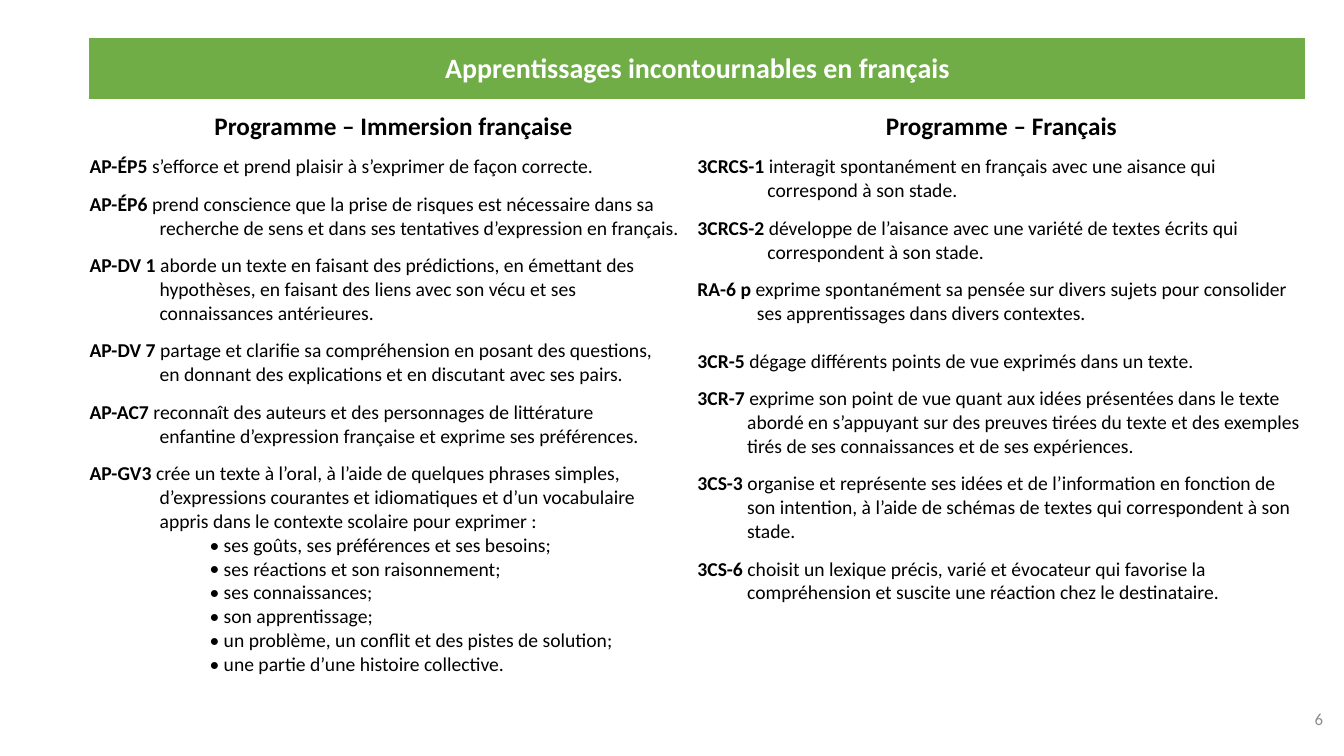
import pptx
import pptx.util
import pptx.dml.color
import pptx.enum.text
import lxml.etree

Pt = pptx.util.Pt
ALIGN = pptx.enum.text.PP_ALIGN
MIDDLE = pptx.enum.text.MSO_ANCHOR.MIDDLE
COLORS = {"banner": "70AD47", "banner_text": "FFFFFF", "text": "000000", "number": "8C8C8C"}
NS = "http://schemas.openxmlformats.org/drawingml/2006/main"
NO_GRID_STYLE = "{2D5ABB26-0587-4C30-8999-92F81FD0307C}"
GAP = 9.75


def add_run(paragraph, text, size, color, bold=False):
    run = paragraph.add_run()
    run.text = text
    run.font.name = "Calibri"
    run.font.size = Pt(size)
    run.font.bold = bold
    run.font.color.rgb = pptx.dml.color.RGBColor.from_string(COLORS[color])


def set_indent(paragraph, margin, first_line):
    properties = paragraph._p.get_or_add_pPr()
    properties.set("marL", str(Pt(margin)))
    properties.set("indent", str(Pt(first_line)))
    return properties


immersion_outcomes = [
    ("AP-ÉP5 ", "s’efforce et prend plaisir à s’exprimer de façon correcte.", 50, 0),
    ("AP-ÉP6 ", "prend conscience que la prise de risques est nécessaire dans sa recherche de sens et dans ses tentatives d’expression en français.", 50, GAP),
    ("AP-DV 1 ", "aborde un texte en faisant des prédictions, en émettant des hypothèses, en faisant des liens avec son vécu et ses\nconnaissances antérieures.", 50, GAP),
    ("AP-DV 7 ", "partage et clarifie sa compréhension en posant des questions,\nen donnant des explications et en discutant avec ses pairs.", 50, GAP),
    ("AP-AC7 ", "reconnaît des auteurs et des personnages de littérature\nenfantine d’expression française et exprime ses préférences.", 50, GAP),
    ("AP-GV3 ", "crée un texte à l’oral, à l’aide de quelques phrases simples, d’expressions courantes et idiomatiques et d’un vocabulaire\nappris dans le contexte scolaire pour exprimer :", 50, GAP),
]
expression_topics = [
    "ses goûts, ses préférences et ses besoins;",
    "ses réactions et son raisonnement;",
    "ses connaissances;",
    "son apprentissage;",
    "un problème, un conflit et des pistes de solution;",
    "une partie d’une histoire collective.",
]
french_outcomes = [
    ("3CRCS-1 ", "interagit spontanément en français avec une aisance qui correspond à son stade.", 50, 0),
    ("3CRCS-2 ", "développe de l’aisance avec une variété de textes écrits qui correspondent à son stade.", 50, GAP),
    ("RA-6 p ", "exprime spontanément sa pensée sur divers sujets pour consolider ses apprentissages dans divers contextes.", 42.5, GAP),
    ("3CR-5 ", "dégage différents points de vue exprimés dans un texte.", 35.5, 17),
    ("3CR-7 ", "exprime son point de vue quant aux idées présentées dans le texte abordé en s’appuyant sur des preuves tirées du texte et des exemples tirés de ses connaissances et de ses expériences.", 35.5, GAP),
    ("3CS-3 ", "organise et représente ses idées et de l’information en fonction de son intention, à l’aide de schémas de textes qui correspondent à son stade.", 35.5, GAP),
    ("3CS-6 ", "choisit un lexique précis, varié et évocateur qui favorise la compréhension et suscite une réaction chez le destinataire.", 35.5, GAP),
]
programmes = [
    ("Programme – Immersion française", immersion_outcomes, expression_topics),
    ("Programme – Français", french_outcomes, []),
]

presentation = pptx.Presentation()
presentation.slide_width = Pt(960)
presentation.slide_height = Pt(540)
slide = presentation.slides.add_slide(presentation.slide_layouts[6])

frame = slide.shapes.add_table(3, 2, Pt(64), Pt(27.4), Pt(868.4), Pt(467.3))
outcomes_table = frame.table
outcomes_table.first_row = False
outcomes_table.horz_banding = False
frame.element.find(f".//{{{NS}}}tableStyleId").text = NO_GRID_STYLE
for row, height in zip(outcomes_table.rows, (43.2, 40.3, 383.8)):
    row.height = Pt(height)
for cell in outcomes_table.iter_cells():
    cell.margin_left = cell.margin_top = cell.margin_right = cell.margin_bottom = 0
    cell.fill.background()

banner = outcomes_table.cell(0, 0)
banner.merge(outcomes_table.cell(0, 1))
banner.vertical_anchor = MIDDLE
for column in range(2):
    banner_part = outcomes_table.cell(0, column)
    banner_part.fill.solid()
    banner_part.fill.fore_color.rgb = pptx.dml.color.RGBColor.from_string(COLORS["banner"])
    sides = (("lnL", "lnT"), ("lnR", "lnT"))[column]
    for position, side in enumerate(sides):
        border = lxml.etree.Element(f"{{{NS}}}{side}", w=str(Pt(0.5)))
        border_fill = lxml.etree.SubElement(border, f"{{{NS}}}solidFill")
        lxml.etree.SubElement(border_fill, f"{{{NS}}}srgbClr", val=COLORS["banner"])
        banner_part._tc.get_or_add_tcPr().insert(position, border)
banner_line = banner.text_frame.paragraphs[0]
banner_line.alignment = ALIGN.CENTER
add_run(banner_line, "Apprentissages incontournables en français", 20, "banner_text", True)

for column, (programme, outcomes, topics) in enumerate(programmes):
    heading = outcomes_table.cell(1, column)
    heading.vertical_anchor = MIDDLE
    heading_line = heading.text_frame.paragraphs[0]
    heading_line.alignment = ALIGN.CENTER
    add_run(heading_line, programme, 18, "text", True)

    outcome_text = outcomes_table.cell(2, column).text_frame
    for index, (code, description, hang, gap) in enumerate(outcomes):
        outcome = outcome_text.add_paragraph() if index else outcome_text.paragraphs[0]
        set_indent(outcome, hang, -hang)
        if gap:
            outcome.space_before = Pt(gap)
        add_run(outcome, code, 14, "text", True)
        for line_index, line in enumerate(description.split("\n")):
            if line_index:
                outcome.add_line_break()
            add_run(outcome, line, 14, "text")
    for topic in topics:
        topic_line = outcome_text.add_paragraph()
        properties = set_indent(topic_line, 95.8, -10.1)
        lxml.etree.SubElement(properties, f"{{{NS}}}buFont", typeface="Calibri")
        lxml.etree.SubElement(properties, f"{{{NS}}}buChar", char="•")
        add_run(topic_line, topic, 14, "text")

page_number = slide.shapes.add_textbox(Pt(897), Pt(499), Pt(57.6), Pt(41)).text_frame
page_number.word_wrap = True
page_number.margin_left = page_number.margin_right = Pt(9.4)
page_number.margin_top = page_number.margin_bottom = Pt(9.4)
page_number.paragraphs[0].alignment = ALIGN.RIGHT
add_run(page_number.paragraphs[0], "6", 12, "number")

presentation.save("out.pptx")
